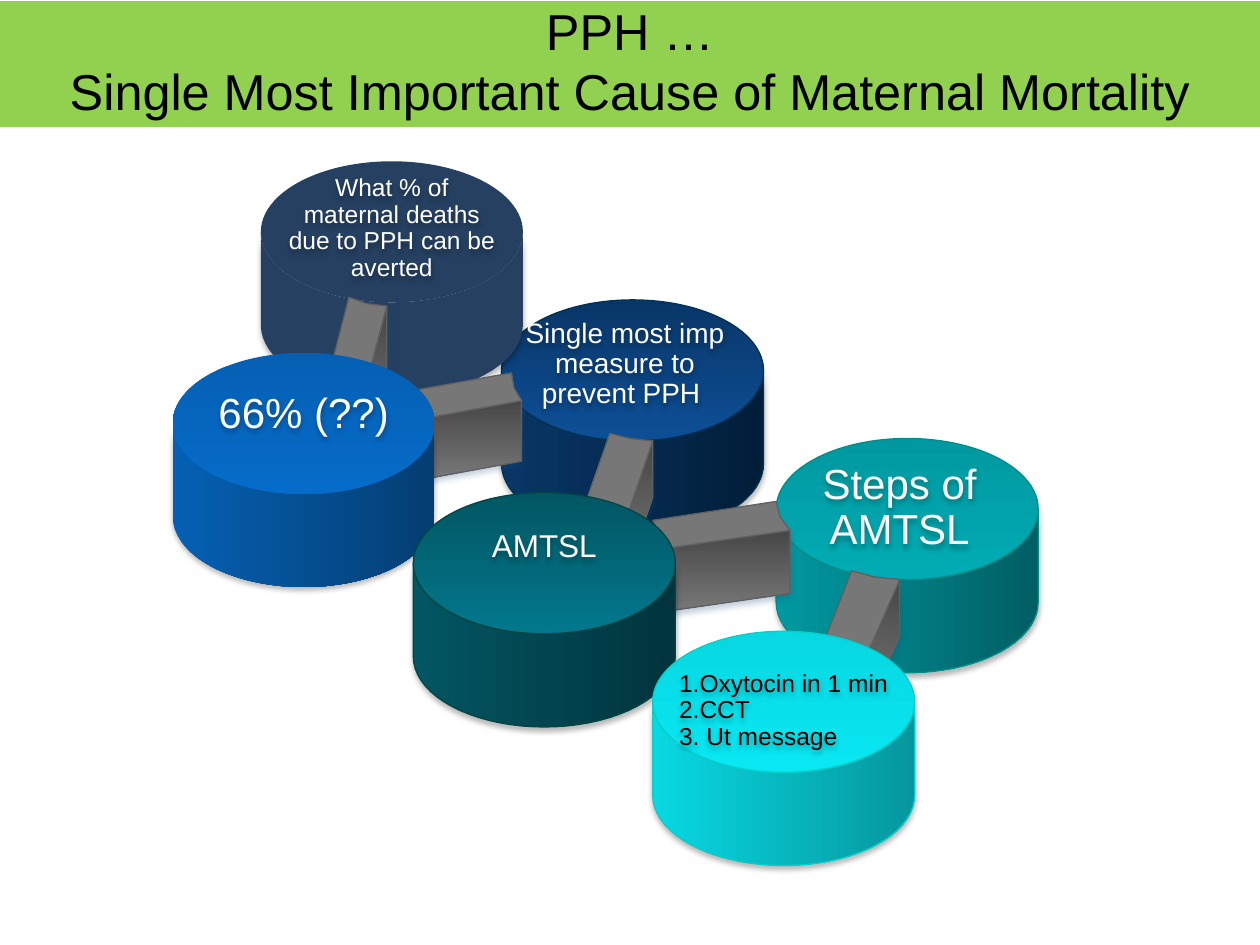
import math

import pptx
import pptx.dml.color
import pptx.enum.shapes
import pptx.enum.text
import pptx.util
from lxml import etree

RGBColor = pptx.dml.color.RGBColor
Inches = pptx.util.Inches
Pt = pptx.util.Pt
PP_ALIGN = pptx.enum.text.PP_ALIGN
MSO_ANCHOR = pptx.enum.text.MSO_ANCHOR
MSO_SHAPE = pptx.enum.shapes.MSO_SHAPE

BLACK = RGBColor(0x00, 0x00, 0x00)
WHITE = RGBColor(0xFF, 0xFF, 0xFF)
BANNER_GREEN = RGBColor(0x92, 0xD0, 0x50)
SLATE = RGBColor(0x25, 0x40, 0x61)
NAVY = RGBColor(0x09, 0x36, 0x67)
NAVY_LIGHT = RGBColor(0x0D, 0x4F, 0x97)
NAVY_DARK = RGBColor(0x01, 0x1E, 0x39)
NAVY_EDGE = RGBColor(0x01, 0x32, 0x53)
BLUE = RGBColor(0x05, 0x60, 0xB3)
BLUE_LIGHT = RGBColor(0x06, 0x6C, 0xC9)
BLUE_DARK = RGBColor(0x04, 0x3E, 0x72)
PETROL = RGBColor(0x02, 0x56, 0x63)
PETROL_LIGHT = RGBColor(0x02, 0x78, 0x8C)
PETROL_DARK = RGBColor(0x01, 0x34, 0x3D)
PETROL_EDGE = RGBColor(0x03, 0x45, 0x43)
TEAL = RGBColor(0x01, 0x99, 0xA1)
TEAL_LIGHT = RGBColor(0x01, 0xAB, 0xB3)
TEAL_DARK = RGBColor(0x01, 0x5E, 0x63)
TEAL_EDGE = RGBColor(0x04, 0x8C, 0x89)
CYAN = RGBColor(0x08, 0xD8, 0xE2)
CYAN_LIGHT = RGBColor(0x08, 0xE7, 0xF2)
CYAN_DARK = RGBColor(0x06, 0x97, 0x9E)
CYAN_EDGE = RGBColor(0x06, 0xCE, 0xC9)
GREY = RGBColor(0x77, 0x77, 0x77)
GREY_DARK = RGBColor(0x47, 0x47, 0x47)
GREY_EDGE = RGBColor(0x60, 0x60, 0x60)
LINK_SHADOW = RGBColor(0x1F, 0x49, 0x7D)

DRAWING_NS = "http://schemas.openxmlformats.org/drawingml/2006/main"


class DiskSlide:
    font = "Arial"
    edge_width = Pt(0.75)
    radius_x, radius_y, thickness = 1.04, 0.56, 0.74
    arc_steps = 36

    def __init__(self, slide):
        self.slide = slide

    def paint(self, shape, start, end, angle, edge):
        shape.shadow.inherit = False
        if start == end:
            shape.fill.solid()
            shape.fill.fore_color.rgb = start
        else:
            shape.fill.gradient()
            shape.fill.gradient_angle = angle
            for stop, color in zip(shape.fill.gradient_stops, (start, end)):
                stop.color.rgb = color
        if edge is None:
            shape.line.fill.background()
        else:
            shape.line.color.rgb = edge
            shape.line.width = self.edge_width

    def cast_shadow(self, shape, color, blur):
        shape.shadow.inherit = False
        effects = shape.element.spPr.find(f"{{{DRAWING_NS}}}effectLst")
        outer = etree.SubElement(
            effects, f"{{{DRAWING_NS}}}outerShdw",
            blurRad=str(Pt(blur)), dist=str(Pt(2)), dir="5400000", rotWithShape="0")
        tone = etree.SubElement(outer, f"{{{DRAWING_NS}}}srgbClr", val=str(color))
        etree.SubElement(tone, f"{{{DRAWING_NS}}}alpha", val="27000")

    def outline(self, points):
        corners = [(Inches(x), Inches(y)) for x, y in points]
        builder = self.slide.shapes.build_freeform(*corners[0], scale=1.0)
        builder.add_line_segments(corners[1:], close=True)
        return builder.convert_to_shape()

    def disk(self, x, y, base, light, dark, edge):
        angles = [math.pi * i / self.arc_steps for i in range(self.arc_steps + 1)]
        rim = [(x + self.radius_x * math.cos(a), y + self.radius_y * math.sin(a))
               for a in angles]
        foot = [(px, py + self.thickness) for px, py in rim]
        side = self.outline(foot + rim[::-1])
        self.paint(side, base, dark, 0, edge)
        self.cast_shadow(side, BLACK, 3)
        top = self.slide.shapes.add_shape(
            MSO_SHAPE.OVAL, Inches(x - self.radius_x), Inches(y - self.radius_y),
            Inches(2 * self.radius_x), Inches(2 * self.radius_y))
        self.paint(top, base, light, 270, edge)

    def link(self, depth, points):
        near, far = points[2:4]
        front = self.outline([near, (near[0], near[1] + depth),
                              (far[0], far[1] + depth), far])
        self.paint(front, GREY_DARK, GREY, 270, GREY_EDGE)
        self.cast_shadow(front, LINK_SHADOW, 4)
        self.paint(self.outline(points), GREY, GREY, 0, GREY_EDGE)

    def set_text(self, shape, text, size, color, align, spacing, frame_format):
        frame = shape.text_frame
        frame.text = text
        for name, value in frame_format.items():
            setattr(frame, name, value)
        for paragraph in frame.paragraphs:
            for name, value in {"alignment": align, "line_spacing": spacing}.items():
                setattr(paragraph, name, value)
            for name, value in {"name": self.font, "size": Pt(size)}.items():
                setattr(paragraph.font, name, value)
            paragraph.font.color.rgb = color

    def banner(self, text):
        banner = self.slide.shapes.add_shape(
            MSO_SHAPE.RECTANGLE, Inches(0), Inches(0.01), Inches(10), Inches(1))
        self.paint(banner, BANNER_GREEN, BANNER_GREEN, 0, None)
        self.set_text(banner, text, 28.8, BLACK, PP_ALIGN.CENTER, 1.0,
                      {"word_wrap": True, "vertical_anchor": MSO_ANCHOR.BOTTOM})

    def label(self, box, text, size, color=WHITE, align=PP_ALIGN.CENTER):
        label = self.slide.shapes.add_textbox(*map(Inches, box))
        margins = {f"margin_{side}": 0 for side in ("left", "top", "right", "bottom")}
        self.set_text(label, text, size, color, align, 0.9,
                      {"word_wrap": True, "vertical_anchor": MSO_ANCHOR.MIDDLE, **margins})
        self.cast_shadow(label, BLACK, 3)


def main():
    deck = pptx.Presentation()
    deck.slide_width, deck.slide_height = Inches(10), Inches(7.5)
    page = DiskSlide(deck.slides.add_slide(deck.slide_layouts[6]))

    page.disk(7.2, 4.04, TEAL, TEAL_LIGHT, TEAL_DARK, TEAL_EDGE)
    page.disk(5.02, 2.94, NAVY, NAVY_LIGHT, NAVY_DARK, NAVY_EDGE)
    page.disk(3.11, 1.84, SLATE, SLATE, SLATE, None)
    page.link(0.5, [(2.77, 2.36), (2.91, 2.41), (3.07, 2.43), (2.89, 3.11), (2.6, 3.02)])
    page.link(0.48, [(4.06, 2.96), (4.08, 3.08), (4.14, 3.18), (3.38, 3.32), (3.28, 3.1)])
    page.disk(2.41, 3.36, BLUE, BLUE_LIGHT, BLUE_DARK, None)
    page.link(0.45, [(4.84, 3.44), (5, 3.48), (5.18, 3.5), (4.97, 4.12), (4.63, 4.04)])
    page.link(0.5, [(6.16, 3.98), (6.19, 4.1), (6.27, 4.21), (5.3, 4.35), (5.18, 4.13)])
    page.disk(4.32, 4.47, PETROL, PETROL_LIGHT, PETROL_DARK, PETROL_EDGE)
    page.link(0.45, [(6.76, 4.53), (6.94, 4.58), (7.14, 4.6), (6.88, 5.2), (6.52, 5.14)])
    page.disk(6.22, 5.57, CYAN, CYAN_LIGHT, CYAN_DARK, CYAN_EDGE)

    page.banner("PPH …\vSingle Most Important Cause of Maternal Mortality")
    page.label((2.29, 1.39, 1.64, 0.85),
               "What % of maternal deaths due to PPH can be averted", 14)
    page.label((1.59, 3.11, 1.64, 0.36), "66% (??)", 24)
    page.label((4.14, 2.53, 1.64, 0.73), "Single most imp measure to prevent PPH ", 16)
    page.label((3.5, 4.21, 1.64, 0.27), "AMTSL", 18)
    page.label((6.32, 3.67, 1.64, 0.73), "Steps of AMTSL", 24)
    page.label((5.39, 5.32, 1.76, 0.64),
               "1.Oxytocin in 1 min\n2.CCT\n3. Ut message", 14, BLACK, PP_ALIGN.LEFT)
    deck.save("out.pptx")


if __name__ == "__main__":
    main()
